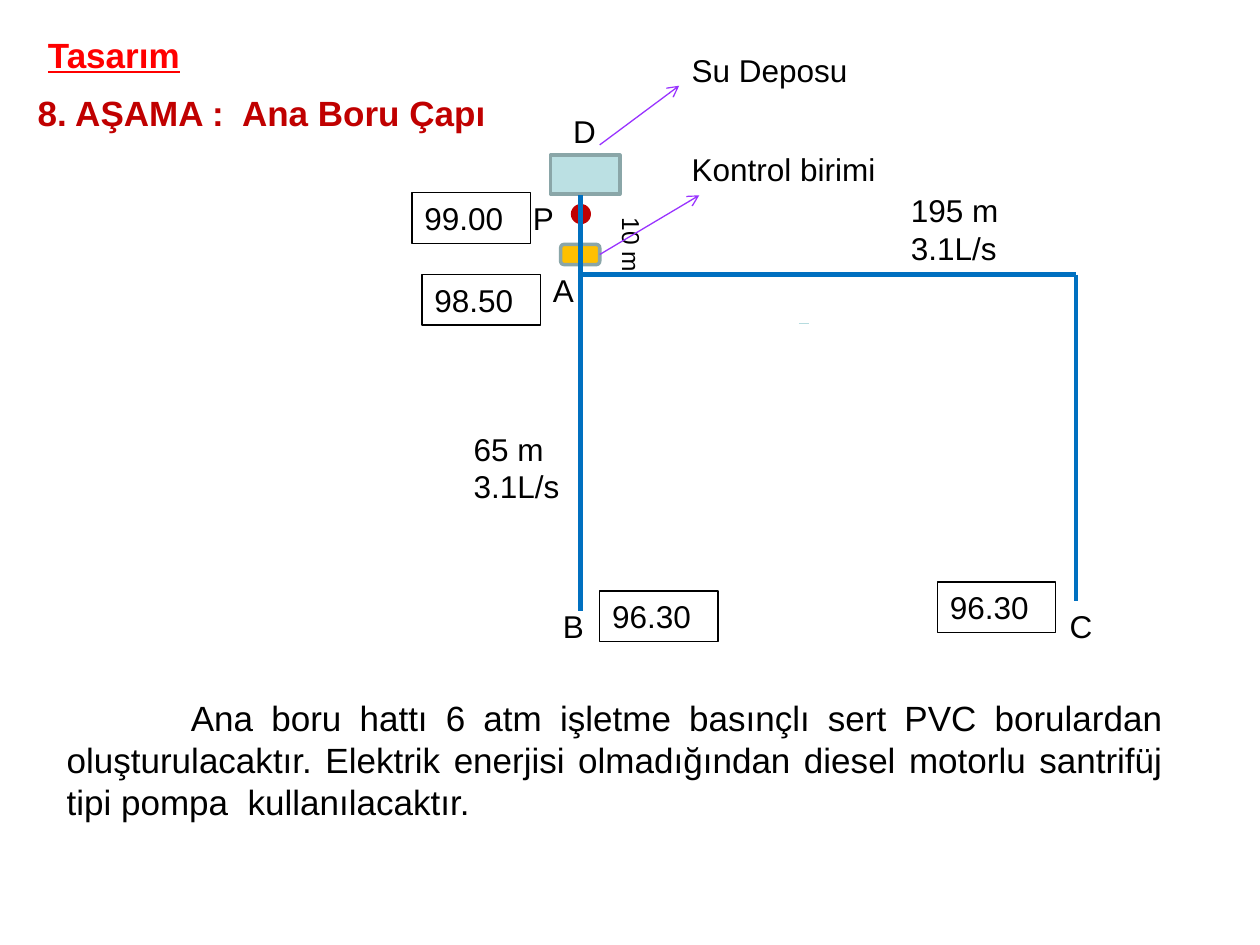
from typing import NamedTuple, Optional

from lxml.etree import SubElement
from pptx import Presentation
from pptx.dml.color import RGBColor
from pptx.enum.shapes import MSO_CONNECTOR, MSO_SHAPE
from pptx.enum.text import MSO_ANCHOR, MSO_AUTO_SIZE, PP_ALIGN
from pptx.oxml.ns import qn
from pptx.util import Pt

BLACK = RGBColor(0x00, 0x00, 0x00)
RED = RGBColor(0xFF, 0x00, 0x00)
CRIMSON = RGBColor(0xC0, 0x00, 0x00)
BLUE = RGBColor(0x00, 0x70, 0xC0)
PURPLE = RGBColor(0x99, 0x33, 0xFF)
TEAL = RGBColor(0xBB, 0xE0, 0xE3)
PALE = RGBColor(0xB6, 0xDC, 0xDF)
GRAY = RGBColor(0x8A, 0xA6, 0xA8)
AMBER = RGBColor(0xFF, 0xC0, 0x00)
FONT = "Arial"


class Label(NamedTuple):
    lines: tuple[str, ...]
    left: float
    top: float
    width: float
    height: float = 28.8
    size: float = 18
    color: RGBColor = BLACK
    bold: bool = False
    frame: bool = False
    turn: float = 0


class Part(NamedTuple):
    kind: MSO_SHAPE
    left: float
    top: float
    width: float
    height: float
    fill: RGBColor
    edge: Optional[RGBColor] = None


class Line(NamedTuple):
    x1: float
    y1: float
    x2: float
    y2: float
    color: RGBColor = BLUE
    width: float = 2.75
    arrow: bool = False


def place(shape, left: float, top: float, width: float, height: float) -> None:
    shape.left, shape.top = Pt(left), Pt(top)
    shape.width, shape.height = Pt(width), Pt(height)


def add_run(para, text: str, size: float, color: RGBColor, bold: bool = False):
    run = para.add_run()
    run.text = text
    run.font.name, run.font.size, run.font.bold = FONT, Pt(size), bold
    run.font.color.rgb = color
    return run


def add_label(slide, label: Label):
    box = slide.shapes.add_textbox(Pt(label.left), Pt(label.top),
                                   Pt(label.width), Pt(label.height))
    box.rotation = label.turn
    if label.frame:
        box.line.color.rgb, box.line.width = BLACK, Pt(0.75)
    text = box.text_frame
    text.word_wrap = True
    text.auto_size = MSO_AUTO_SIZE.SHAPE_TO_FIT_TEXT
    for i, line in enumerate(label.lines):
        para = text.add_paragraph() if i else text.paragraphs[0]
        add_run(para, line, label.size, label.color, label.bold)
    return box


def add_part(slide, part: Part):
    shape = slide.shapes.add_shape(part.kind, Pt(part.left), Pt(part.top),
                                   Pt(part.width), Pt(part.height))
    shape.shadow.inherit = False
    shape.fill.solid()
    shape.fill.fore_color.rgb = part.fill
    if part.edge is None:
        shape.line.fill.background()
    else:
        shape.line.color.rgb, shape.line.width = part.edge, Pt(2)
    return shape


def add_line(slide, line: Line):
    link = slide.shapes.add_connector(MSO_CONNECTOR.STRAIGHT, Pt(line.x1),
                                      Pt(line.y1), Pt(line.x2), Pt(line.y2))
    link.line.color.rgb, link.line.width = line.color, Pt(line.width)
    props = link._element.spPr
    if line.arrow:
        SubElement(props.find(qn("a:ln")), qn("a:tailEnd"), type="arrow")
    SubElement(props, qn("a:effectLst"))
    return link


# Pipe network: main pipe, branch level and far corner
MAIN, LEVEL, FAR = 331.9, 157, 614.9
PIPES = (
    Line(FAR, LEVEL, MAIN, LEVEL),
    Line(FAR, LEVEL, FAR, 343.4),
    Line(MAIN, 111.6, MAIN, 349.2),
)
TICK = Line(456.5, 185, 462.2, 185, PALE, 0.75)
TANK = Part(MSO_SHAPE.RECTANGLE, 314.6, 88.6, 39.6, 22.3, TEAL, GRAY)
PUMP = Part(MSO_SHAPE.OVAL, 326.2, 116.6, 11.5, 11.5, CRIMSON)
UNIT = Part(MSO_SHAPE.ROUNDED_RECTANGLE, 320.4, 139.7, 22.3, 11.5, AMBER, GRAY)

LABELS = (
    Label(("8. AŞAMA :  Ana Boru Çapı",), 14.4, 49, 306, 31.7, 20, CRIMSON, True),
    # Pipe lengths and flows
    Label(("65 m", "3.1L/s"), 263.5, 241.9, 118.8, 51.1),
    Label(("195 m", "3.1L/s"), 513.4, 105.8, 118.8, 51.1),
    Label(("10 m",), 326.9, 139, 67.7, 24.5, 14, turn=90),
    # Nodes
    Label(("D",), 320.4, 60.5, 85),
    Label(("P",), 297.4, 110.2, 39.6),
    Label(("A",), 308.9, 151.2, 73.4),
    Label(("B",), 314.6, 343.4, 85),
    Label(("C",), 604.1, 343.4, 85),
    # Callouts
    Label(("Su Deposu",), 388.1, 25.9, 136.1),
    Label(("Kontrol birimi",), 388.1, 82.1, 136.1),
)
# Elevations: text, left, top
LEVELS = (("99.00", 235.4, 110.2), ("98.50", 241.2, 157),
          ("96.30", 535.7, 332.6), ("96.30", 342.7, 337.7))
NOTE = ("Ana boru hattı 6 atm işletme basınçlı sert PVC borulardan "
        "oluşturulacaktır. Elektrik enerjisi olmadığından diesel motorlu "
        "santrifüj tipi pompa  kullanılacaktır.")


def main() -> None:
    deck = Presentation()
    deck.slide_width, deck.slide_height = Pt(720), Pt(540)
    slide = deck.slides.add_slide(deck.slide_layouts[5])

    # Title
    title = slide.shapes.title
    place(title, 20.2, 15.1, 699.8, 31.7)
    title.text_frame.vertical_anchor = MSO_ANCHOR.MIDDLE
    title.text_frame.auto_size = MSO_AUTO_SIZE.SHAPE_TO_FIT_TEXT
    head = title.text_frame.paragraphs[0]
    head.alignment = PP_ALIGN.LEFT
    add_run(head, "Tasarım", 20, RED, True).font.underline = True

    # Tank, pump and control unit under the pipes
    add_line(slide, TICK)
    add_part(slide, TANK)
    add_part(slide, PUMP)
    unit = add_part(slide, UNIT)
    for pipe in PIPES:
        add_line(slide, pipe)

    # Labels and elevations
    for label in LABELS:
        add_label(slide, label)
    for text, left, top in LEVELS:
        add_label(slide, Label((text,), left, top, 67.7, frame=True))

    # Note with an indented first line
    note = add_label(slide, Label((NOTE,), 31, 394.6, 640.8, 79.9, 20))
    para = note.text_frame.paragraphs[0]
    para.alignment = PP_ALIGN.JUSTIFY
    para._p.get_or_add_pPr().set("indent", str(Pt(71)))

    # Arrows to the callouts
    add_line(slide, Line(342.7, 82.8, 388.1, 49, PURPLE, 0.75, True))
    lead = add_line(slide, Line(342.7, 145.4, 399.6, 111.6, PURPLE, 0.75, True))
    lead.begin_connect(unit, 3)

    deck.save("out.pptx")


if __name__ == "__main__":
    main()
